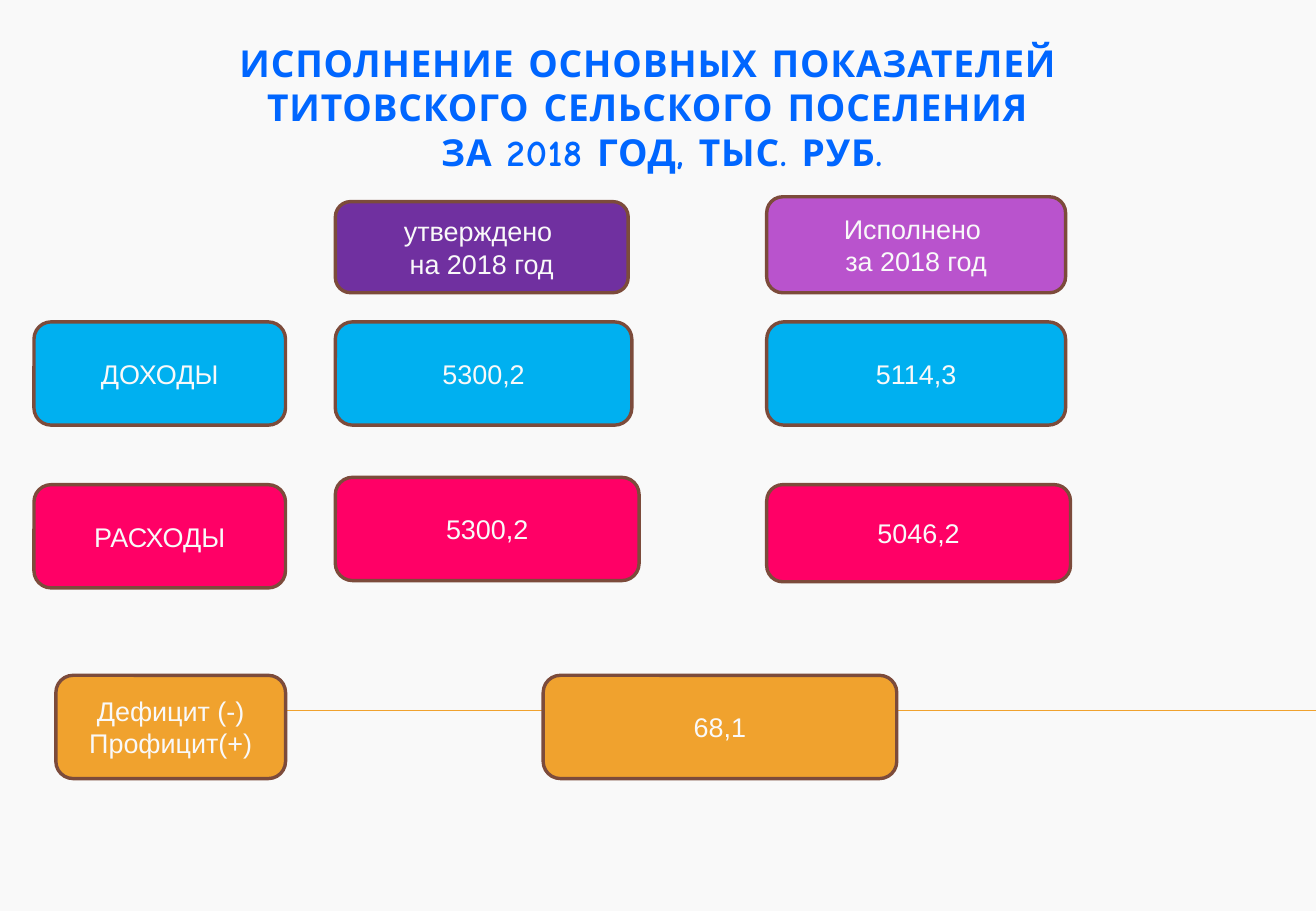
import pptx
import pptx.util
import pptx.dml.color
import pptx.enum.shapes
import pptx.enum.text
import pptx.oxml.ns
from lxml import etree

Pt = pptx.util.Pt
HUES = {
    "back": "F9F9F9", "text": "F9F9F9", "title": "0066FF", "edge": "7C4B3B",
    "plan": "7030A0", "fact": "B953CD", "income": "00B0F0",
    "spend": "FF0066", "result": "F0A22E",
}
WIDE, HIGH = 779.76, 540
LEFT, PLAN, FACT = 20.16, 198.72, 454.32  # column edges
TALL = 61.2


def hue(name):
    return pptx.dml.color.RGBColor.from_string(HUES[name])


def write(frame, text, size=16, font="Arial", color="text", bold=False, gap=0):
    """Fill a frame with centred lines; gap is letter spacing in points."""
    frame.word_wrap = True
    for i, line in enumerate(text.split("\n")):
        para = frame.paragraphs[0] if i == 0 else frame.add_paragraph()
        para.alignment = pptx.enum.text.PP_ALIGN.CENTER
        run = para.add_run()
        run.text = line
        run.font.size = Pt(size)
        run.font.name = font
        run.font.bold = bold
        run.font.color.rgb = hue(color)
        if gap:
            run.font._element.set("spc", str(round(gap * 100)))


def title(slide, x, y, w, h):
    frame = slide.shapes.add_textbox(Pt(x), Pt(y), Pt(w), Pt(h)).text_frame
    write(frame, "ИСПОЛНЕНИЕ ОСНОВНЫХ ПОКАЗАТЕЛЕЙ \n"
                 "ТИТОВСКОГО СЕЛЬСКОГО ПОСЕЛЕНИЯ \n"
                 " ЗА 2018 ГОД, ТЫС. РУБ.",
          size=22, font="Comic Neue", color="title", bold=True, gap=0.5)
    frame.auto_size = pptx.enum.text.MSO_AUTO_SIZE.SHAPE_TO_FIT_TEXT


def card(slide, text, color, x, y, w, h=TALL):
    kind = pptx.enum.shapes.MSO_SHAPE.ROUNDED_RECTANGLE
    shape = slide.shapes.add_shape(kind, Pt(x), Pt(y), Pt(w), Pt(h))
    shape.shadow.inherit = False
    shape.fill.solid()
    shape.fill.fore_color.rgb = hue(color)
    shape.line.color.rgb = hue("edge")
    shape.line.width = Pt(2)
    shape.text_frame.vertical_anchor = pptx.enum.text.MSO_ANCHOR.MIDDLE
    write(shape.text_frame, text)


def rule(slide, x, y, end):
    kind = pptx.enum.shapes.MSO_CONNECTOR.STRAIGHT
    line = slide.shapes.add_connector(kind, Pt(x), Pt(y), Pt(end), Pt(y))
    line.line.color.rgb = hue("result")
    line.line.width = Pt(0.75)
    etree.SubElement(line._element.spPr, pptx.oxml.ns.qn("a:effectLst"))


def heads(slide, y):
    """Column heads, standing on the line y."""
    card(slide, "утверждено \nна 2018 год", "plan", PLAN, y - 54, 173.52, 54)
    card(slide, "Исполнено \nза 2018 год", "fact", FACT, y - 56.88, 177.12, 56.88)


def income(slide, y):
    card(slide, "ДОХОДЫ", "income", LEFT, y, 149.04)
    card(slide, "5300,2", "income", PLAN, y, 175.68)
    card(slide, "5114,3", "income", FACT, y, 177.12)


def spend(slide, y):
    card(slide, "РАСХОДЫ", "spend", LEFT, y, 149.04)
    card(slide, "5300,2", "spend", PLAN, y - 4.32, 180)
    card(slide, "5046,2", "spend", FACT, y, 180, 57.6)


def result(slide, y):
    rule(slide, 43.92, y + 20.88, WIDE)
    card(slide, "Дефицит (-)\nПрофицит(+)", "result", 33.12, y, 136.08)
    card(slide, "68,1", "result", 321.84, y, 209.52)


def main():
    deck = pptx.Presentation()
    deck.slide_width, deck.slide_height = Pt(WIDE), Pt(HIGH)
    slide = deck.slides.add_slide(deck.slide_layouts[6])
    slide.background.fill.solid()
    slide.background.fill.fore_color.rgb = hue("back")
    title(slide, 6.48, 20.16, 763.2, 87.12)
    heads(slide, 173.52)
    income(slide, 190.8)
    spend(slide, 287.28)
    result(slide, 400.32)
    deck.save("out.pptx")


if __name__ == "__main__":
    main()
